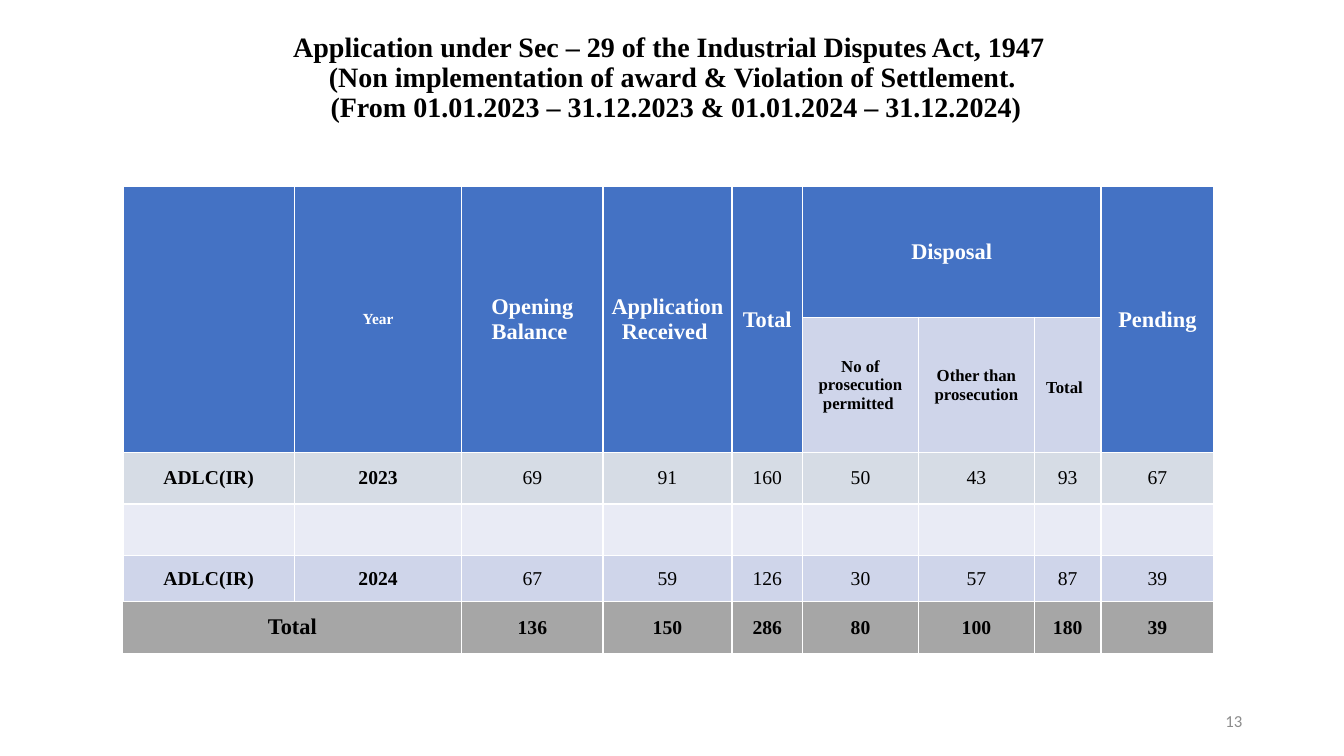
from lxml.etree import SubElement
from pptx import Presentation
from pptx.dml.color import RGBColor
from pptx.enum.text import MSO_ANCHOR, PP_ALIGN
from pptx.oxml.ns import qn
from pptx.util import Inches, Pt

COLORS = {
    "black": "000000",
    "white": "FFFFFF",
    "number": "8C8C8C",
    "header": "4472C4",
    "subheader": "CFD5EA",
    "first year": "D6DCE5",
    "gap": "E9EBF5",
    "second year": "CFD5EA",
    "total": "A6A6A6",
}
TITLE_LINES = [
    "Application under Sec – 29 of the Industrial Disputes Act, 1947 ",
    "(Non implementation of award & Violation of Settlement.",
    " (From 01.01.2023 – 31.12.2023 & 01.01.2024 – 31.12.2024)",
]
COLUMN_WIDTHS = [1.7, 1.66, 1.4, 1.28, 0.7, 1.15, 1.15, 0.66, 1.12]
ROW_HEIGHTS = [1.3, 1.34, 0.51, 0.51, 0.46, 0.51]
HEADERS = ["", "Year", "Opening Balance ", "Application Received ", "Total",
           "Disposal", "", "", "Pending"]
SUBHEADERS = {5: "No of prosecution permitted ", 6: "Other than prosecution", 7: "Total"}
BODY = [
    ("first year", ["ADLC(IR)", "2023", "69", "91", "160", "50", "43", "93", "67"]),
    ("gap", [""] * 9),
    ("second year", ["ADLC(IR)", "2024", "67", "59", "126", "30", "57", "87", "39"]),
    ("total", ["Total", "", "136", "150", "286", "80", "100", "180", "39"]),
]
DISPOSAL = range(5, 8)
THICK_EDGES = ({(0, column, "B") for column in DISPOSAL}
               | {(1, column, "T") for column in DISPOSAL}
               | {(1, 5, "L"), (1, 7, "R")})


class SlideBuilder:
    font = "Times New Roman"

    def __init__(self, presentation):
        self.slide = presentation.slides.add_slide(presentation.slide_layouts[5])

    def add_run(self, paragraph, text, size, color="black", bold=True, font=None):
        run = paragraph.add_run()
        run.text = text
        run.font.name = font or self.font
        run.font.size = Pt(size)
        run.font.bold = bold
        run.font.color.rgb = RGBColor.from_string(COLORS[color])

    def add_title(self, lines, left, top, width, height):
        title = self.slide.shapes.title
        title.left, title.top = Inches(left), Inches(top)
        title.width, title.height = Inches(width), Inches(height)
        title.text_frame.vertical_anchor = MSO_ANCHOR.MIDDLE
        title.text_frame.word_wrap = True
        paragraph = title.text_frame.paragraphs[0]
        paragraph.alignment = PP_ALIGN.CENTER
        paragraph.line_spacing = 0.9
        for index, line in enumerate(lines):
            if index:
                paragraph.add_line_break()
            self.add_run(paragraph, line, 20)

    def add_page_number(self, text, left, top, width, height):
        box = self.slide.shapes.add_textbox(
            Inches(left), Inches(top), Inches(width), Inches(height))
        box.text_frame.word_wrap = True
        box.text_frame.vertical_anchor = MSO_ANCHOR.MIDDLE
        paragraph = box.text_frame.paragraphs[0]
        paragraph.alignment = PP_ALIGN.RIGHT
        self.add_run(paragraph, text, 12, "number", False, "Calibri")

    def add_table(self, left, top, widths, heights):
        frame = self.slide.shapes.add_table(
            len(heights), len(widths), Inches(left), Inches(top),
            Inches(sum(widths)), Inches(sum(heights)))
        table = frame.table
        for column, width in zip(table.columns, widths):
            column.width = Inches(width)
        for row, height in zip(table.rows, heights):
            row.height = Inches(height)
        return table

    def set_border(self, cell, side, width):
        properties = cell._tc.get_or_add_tcPr()
        line = SubElement(properties, qn(f"a:ln{side}"), w=str(Pt(width)))
        if width:
            fill = SubElement(line, qn("a:solidFill"))
            SubElement(fill, qn("a:srgbClr"), val=COLORS["white"])
        else:
            SubElement(line, qn("a:noFill"))

    def format_cell(self, cell, fill, borders):
        for side, width in borders.items():
            self.set_border(cell, side, width)
        cell.fill.solid()
        cell.fill.fore_color.rgb = RGBColor.from_string(COLORS[fill])
        cell.vertical_anchor = MSO_ANCHOR.MIDDLE
        cell.margin_left = cell.margin_right = cell.margin_top = cell.margin_bottom = 0

    def write_cell(self, cell, text, size, color="black", bold=True):
        paragraph = cell.text_frame.paragraphs[0]
        paragraph.alignment = PP_ALIGN.CENTER
        if text:
            self.add_run(paragraph, text, size, color, bold)
        return paragraph


def cell_fill(row, column):
    if row > 1:
        return BODY[row - 2][0]
    return "subheader" if row == 1 and column in DISPOSAL else "header"


def cell_borders(row, column):
    borders = {side: 1.5 if (row, column, side) in THICK_EDGES else 1 for side in "LRTB"}
    if row == 5 and column < 2:
        borders.update(L=0, B=0)
    return borders


def fill_table(builder, table):
    for row in range(len(ROW_HEIGHTS)):
        for column in range(len(COLUMN_WIDTHS)):
            builder.format_cell(table.cell(row, column), cell_fill(row, column),
                                cell_borders(row, column))
    for column, text in enumerate(HEADERS):
        builder.write_cell(table.cell(0, column), text, 11 if text == "Year" else 16, "white")
        if column not in DISPOSAL:
            table.cell(0, column).merge(table.cell(1, column))
    table.cell(0, 5).merge(table.cell(0, 7))
    for column, text in SUBHEADERS.items():
        paragraph = builder.write_cell(table.cell(1, column), text, 12)
        if text == "Total":
            builder.add_run(paragraph, " ", 18)
    for row, (kind, values) in enumerate(BODY, start=2):
        for column, text in enumerate(values):
            size = 16 if text == "Total" else 14
            bold = column < 2 or kind == "total"
            builder.write_cell(table.cell(row, column), text, size, bold=bold)
    table.cell(5, 0).merge(table.cell(5, 1))


def main():
    presentation = Presentation()
    presentation.slide_width = Inches(13.33)
    presentation.slide_height = Inches(7.5)
    builder = SlideBuilder(presentation)
    builder.add_title(TITLE_LINES, 2.17, 0, 9, 1.56)
    builder.add_page_number("13", 9.42, 6.95, 3, 0.4)
    fill_table(builder, builder.add_table(1.22, 1.85, COLUMN_WIDTHS, ROW_HEIGHTS))
    presentation.save("out.pptx")


if __name__ == "__main__":
    main()
